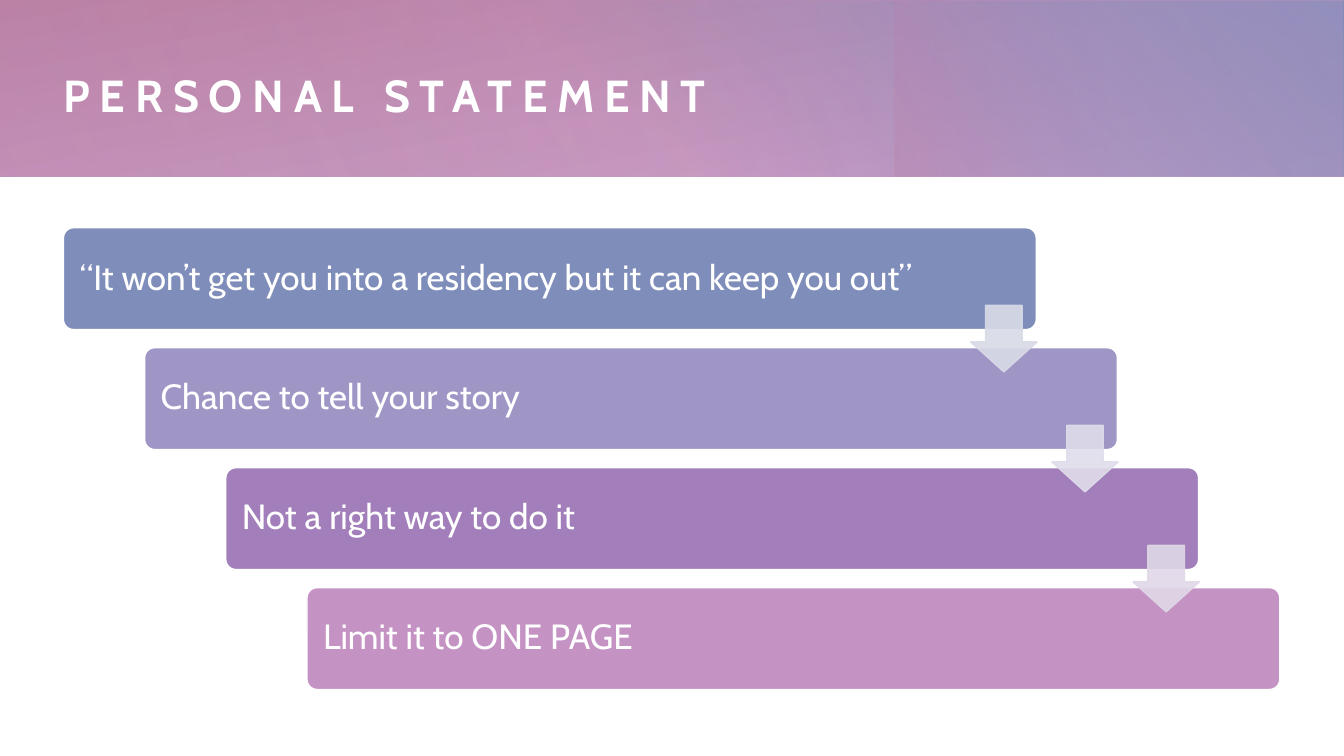
from pptx import Presentation
from pptx.dml.color import RGBColor
from pptx.enum.shapes import MSO_SHAPE
from pptx.enum.text import MSO_ANCHOR, PP_ALIGN
from pptx.oxml.ns import qn
from pptx.util import Inches, Pt
from lxml.etree import SubElement

COLORS = {
    "white": "FFFFFF", "blue": "7F8DBA", "lavender": "9F96C6",
    "purple": "A27FBA", "pink": "C492C3", "rose": "BA7FA0",
    "pale blue": "D8DBE7", "pale lavender": "DFDDEA", "pale purple": "E0D8E7",
}

# Area, rotation, gradient angle, then stops as (position, color, opacity)
BANNER_LAYERS = [
    ((0, 0, 100, 23.33), 0, 260, [(0, "pink", 83), (100, "rose", 100)]),
    ((36.08, 0.13, 63.92, 23.2), 0, 310, [(22, "blue", 0), (99, "blue", 100)]),
    ((74.03, -13.2, 13.13, 49.87), 270, 250, [(45, "purple", 0), (99, "rose", 33)]),
    ((20.1, 0, 79.8, 23.33), 180, 330, [(0, "pink", 30), (99, "pink", 0)]),
    ((0, 0, 64.88, 23.33), 0, 340, [(0, "pink", 21), (99, "pink", 0)]),
]

STEPS = [
    ("“It won’t get you into a residency but it can keep you out”", "blue"),
    ("Chance to tell your story", "lavender"),
    ("Not a right way to do it", "purple"),
    ("Limit it to ONE PAGE", "pink"),
]
ARROW_COLORS = ["pale blue", "pale lavender", "pale purple"]
STEP_RIGHT, STEP_DOWN = 6.04, 15.87


def rgb(name):
    return RGBColor.from_string(COLORS[name])


def set_opacity(color_element, percent):
    if percent < 100:
        SubElement(color_element, qn("a:alpha"), val=str(percent * 1000))


def write_text(shape, text, size, font="Cabin", color="white", bold=False,
               tracking=0, insets=(0, 0), line_spacing=1.0):
    """Write one left-aligned paragraph; insets are (left, right) inches."""
    frame = shape.text_frame
    frame.word_wrap = True
    frame.vertical_anchor = MSO_ANCHOR.MIDDLE
    frame.margin_left, frame.margin_right = map(Inches, insets)
    frame.margin_top = frame.margin_bottom = 0
    para = frame.paragraphs[0]
    para.alignment = PP_ALIGN.LEFT
    para.line_spacing = line_spacing
    span = para.add_run()
    span.text = text
    span.font.size = Pt(size)
    span.font.name = font
    span.font.bold = bold
    span.font.color.rgb = rgb(color)
    if tracking:
        span.font._element.set("spc", str(tracking * 100))


class SlideBuilder:
    """Draws on one slide; every area is left, top, width, height in percent."""

    def __init__(self, deck):
        self.deck = deck
        self.page = deck.slides.add_slide(deck.slide_layouts[6])

    def place(self, area):
        width, height = self.deck.slide_width, self.deck.slide_height
        return [round(share * side / 100)
                for share, side in zip(area, (width, height) * 2)]

    def shape(self, kind, area):
        shape = self.page.shapes.add_shape(kind, *self.place(area))
        shape.shadow.inherit = False
        return shape

    def gradient(self, area, rotation, angle, stops):
        box = self.shape(MSO_SHAPE.RECTANGLE, area)
        box.rotation = rotation
        box.line.fill.background()
        box.fill.gradient()
        box.fill.gradient_angle = 360 - angle
        for stop, (position, color, _) in zip(box.fill.gradient_stops, stops):
            stop.position = position / 100
            stop.color.rgb = rgb(color)
        color_elements = list(box.element.spPr.iter(qn("a:srgbClr")))
        for element, (_, _, opacity) in zip(color_elements, stops):
            set_opacity(element, opacity)

    def title(self, text, area):
        box = self.page.shapes.add_textbox(*self.place(area))
        write_text(box, text, 32, bold=True, tracking=7)

    def step(self, text, color, area):
        box = self.shape(MSO_SHAPE.ROUNDED_RECTANGLE, area)
        box.adjustments[0] = 0.1
        box.fill.solid()
        box.fill.fore_color.rgb = rgb(color)
        box.line.color.rgb = rgb("white")
        box.line.width = Pt(1)
        write_text(box, text, 25, insets=(0.13, 1.0), line_spacing=0.9)

    def arrow(self, color, area):
        arrow = self.shape(MSO_SHAPE.DOWN_ARROW, area)
        arrow.adjustments[0] = 0.55
        arrow.adjustments[1] = 0.45
        arrow.fill.solid()
        arrow.fill.fore_color.rgb = rgb(color)
        arrow.line.color.rgb = rgb(color)
        arrow.line.width = Pt(1)
        for element in list(arrow.element.spPr.iter(qn("a:srgbClr"))):
            set_opacity(element, 90)


def main():
    deck = Presentation()
    deck.slide_width, deck.slide_height = Inches(13.33), Inches(7.5)
    builder = SlideBuilder(deck)
    for layer in BANNER_LAYERS:
        builder.gradient(*layer)
    builder.title("PERSONAL STATEMENT", (4.72, 5.47, 89.85, 14.13))
    for index, (text, color) in enumerate(STEPS):
        builder.step(text, color, (4.72 + index * STEP_RIGHT,
                                   30.13 + index * STEP_DOWN, 72.38, 13.47))
    for index, color in enumerate(ARROW_COLORS):
        builder.arrow(color, (72.22 + index * STEP_RIGHT,
                              40.4 + index * STEP_DOWN, 4.95, 8.8))
    deck.save("out.pptx")


if __name__ == "__main__":
    main()
